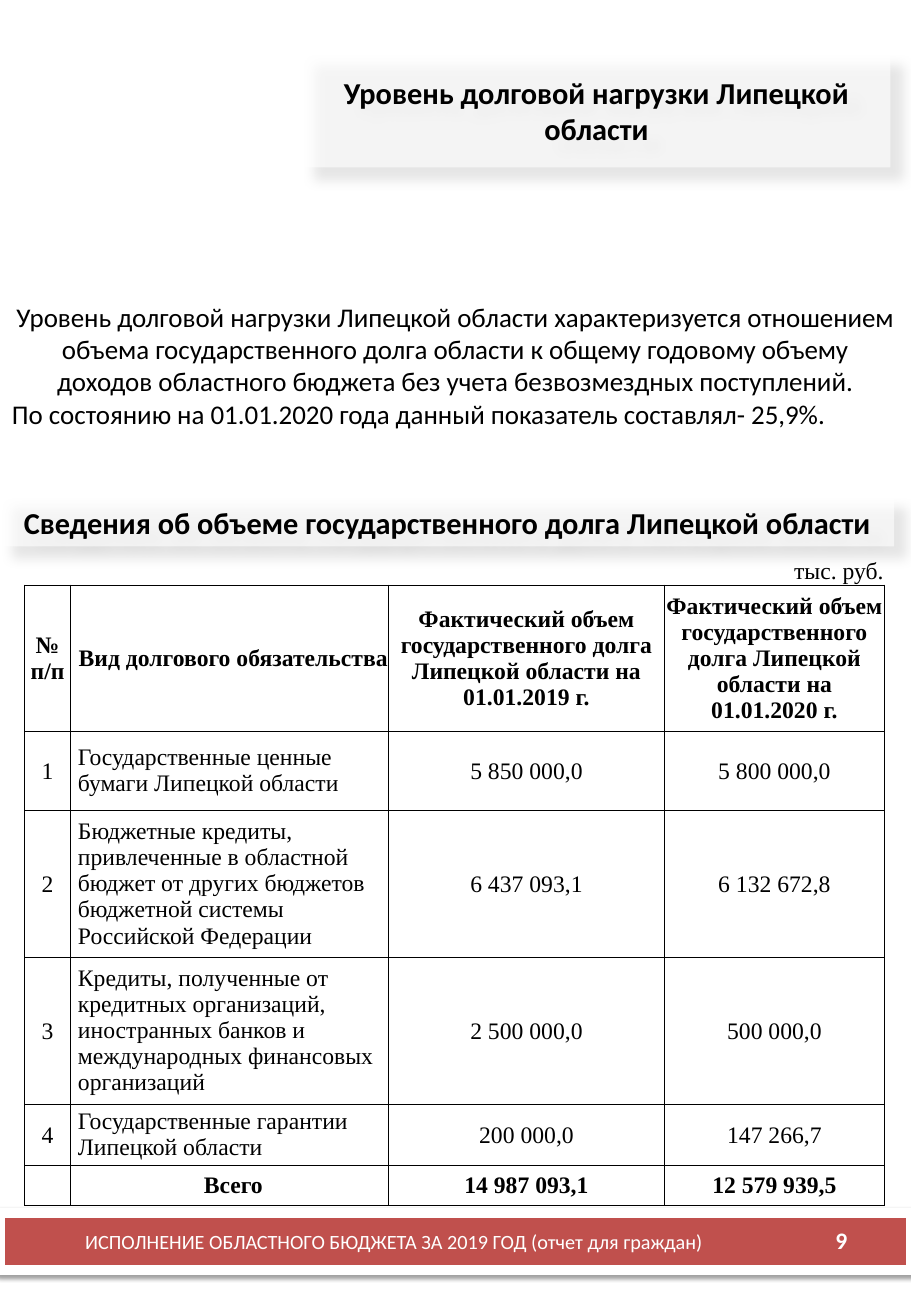
from dataclasses import dataclass

from lxml.etree import SubElement
from pptx import Presentation
from pptx.dml.color import RGBColor
from pptx.enum.shapes import MSO_SHAPE
from pptx.enum.text import MSO_ANCHOR, MSO_AUTO_SIZE, PP_ALIGN
from pptx.oxml import parse_xml
from pptx.oxml.ns import nsdecls, qn
from pptx.util import Cm, Pt


@dataclass(frozen=True)
class Theme:
    text_font: str = "Calibri"
    table_font: str = "Times New Roman"
    black: str = "000000"
    white: str = "FFFFFF"
    red: str = "C0504D"
    heading_size: int = 18
    body_size: int = 16
    table_size: int = 14
    number_size: int = 14
    footer_size: int = 12


class DebtSlide:
    def __init__(self, slide, theme):
        self.slide = slide
        self.theme = theme

    def add_run(self, paragraph, text, size, bold=False, font=None, color=None):
        run = paragraph.add_run()
        run.text = text
        run.font.name = font or self.theme.text_font
        run.font.size = Pt(size)
        run.font.bold = bold
        run.font.color.rgb = RGBColor.from_string(color or self.theme.black)

    def place(self, shape, left, top, width, height):
        shape.left, shape.top = Cm(left), Cm(top)
        shape.width, shape.height = Cm(width), Cm(height)

    def set_shadow(self, shape, opacity, blur, distance, angle):
        shape.shadow.inherit = False
        effects = shape._element.spPr.find(qn("a:effectLst"))
        effects.append(parse_xml(
            f'<a:outerShdw {nsdecls("a")} blurRad="{Pt(blur)}" dist="{Pt(distance)}" '
            f'dir="{angle * 60000}" algn="tl" rotWithShape="0">'
            f'<a:srgbClr val="{self.theme.black}"><a:alpha val="{opacity * 1000}"/>'
            f'</a:srgbClr></a:outerShdw>'))

    def heading(self, shape, box, text, anchor):
        self.place(shape, *box)
        shape.fill.solid()
        shape.fill.fore_color.rgb = RGBColor.from_string(self.theme.white)
        fill_color = shape._element.spPr.find(qn("a:solidFill"))[0]
        SubElement(fill_color, qn("a:alpha"), val="60000")
        self.set_shadow(shape, opacity=16, blur=7, distance=10, angle=45)
        frame = shape.text_frame
        frame.auto_size = MSO_AUTO_SIZE.NONE
        frame.word_wrap = True
        frame.vertical_anchor = anchor
        paragraph = frame.paragraphs[0]
        properties = paragraph._p.get_or_add_pPr()
        properties.set("marL", "0")
        properties.set("indent", "0")
        SubElement(properties, qn("a:buNone"))
        paragraph.alignment = PP_ALIGN.CENTER
        paragraph.space_before = Pt(0)
        self.add_run(paragraph, text, self.theme.heading_size, bold=True)

    def text(self, box, lines, size, anchor=MSO_ANCHOR.TOP, bold=False, color=None):
        shape = self.slide.shapes.add_textbox(*(Cm(length) for length in box))
        frame = shape.text_frame
        frame.word_wrap = True
        frame.vertical_anchor = anchor
        for index, (line, alignment) in enumerate(lines):
            paragraph = frame.add_paragraph() if index else frame.paragraphs[0]
            paragraph.alignment = alignment
            self.add_run(paragraph, line, size, bold, color=color)

    def band(self, box):
        shape = self.slide.shapes.add_shape(
            MSO_SHAPE.RECTANGLE, *(Cm(length) for length in box))
        shape.fill.solid()
        shape.fill.fore_color.rgb = RGBColor.from_string(self.theme.red)
        shape.line.color.rgb = RGBColor.from_string(self.theme.white)
        shape.line.width = Pt(6)
        self.set_shadow(shape, opacity=38, blur=3.1, distance=1.6, angle=90)

    def set_borders(self, cell, visible):
        properties = cell._tc.get_or_add_tcPr()
        for index, side in enumerate("LRTB"):
            paint = (f'<a:solidFill><a:srgbClr val="{self.theme.black}"/></a:solidFill>'
                     if side in visible else "<a:noFill/>")
            properties.insert(index, parse_xml(
                f'<a:ln{side} {nsdecls("a")} w="{Pt(0.5)}">{paint}</a:ln{side}>'))

    def table(self, left, top, widths, heights, rows, name_span):
        table = self.slide.shapes.add_table(
            len(rows), len(widths), Cm(left), Cm(top),
            Cm(sum(widths)), Cm(sum(heights))).table
        table.first_row = table.horz_banding = False
        for column, width in zip(table.columns, widths):
            column.width = Cm(width)
        for row, height in zip(table.rows, heights):
            row.height = Cm(height)
        unit_row, header_row, total_row = 0, 1, len(rows) - 1
        for row_index, (number, name, *amounts) in enumerate(rows):
            values = [number, name] + [""] * (name_span - 1) + amounts
            is_unit = row_index == unit_row
            is_bold = row_index in (header_row, total_row)
            # The name takes several grid columns below the unit row
            if not is_unit:
                table.cell(row_index, 1).merge(table.cell(row_index, name_span))
            for column_index, value in enumerate(values):
                cell = table.cell(row_index, column_index)
                is_name = column_index == 1
                cell.fill.background()
                self.set_borders(cell, "B" if is_unit else "LRTB")
                cell.margin_left = Cm(0.15 if is_name else 0.02)
                cell.margin_right = Cm(0 if is_name else 0.02)
                cell.margin_top = Cm(0 if is_name else 0.02)
                cell.margin_bottom = Cm(0)
                cell.vertical_anchor = MSO_ANCHOR.BOTTOM if is_unit else MSO_ANCHOR.MIDDLE
                if not value:
                    continue
                paragraph = cell.text_frame.paragraphs[0]
                if is_unit:
                    paragraph.alignment = PP_ALIGN.RIGHT
                elif is_name and not is_bold:
                    paragraph.alignment = PP_ALIGN.LEFT
                else:
                    paragraph.alignment = PP_ALIGN.CENTER
                self.add_run(paragraph, value, self.theme.table_size, is_bold,
                             self.theme.table_font)


DEBT_ROWS = [
    ("", "", "", "тыс. руб."),
    ("№ п/п", "Вид долгового обязательства",
     "Фактический объем государственного долга Липецкой области на 01.01.2019 г.",
     "Фактический объем государственного долга Липецкой области на 01.01.2020 г."),
    ("1", "Государственные ценные бумаги Липецкой области", "5 850 000,0", "5 800 000,0"),
    ("2", "Бюджетные кредиты, привлеченные в областной бюджет от других бюджетов "
     "бюджетной системы Российской Федерации", "6 437 093,1", "6 132 672,8"),
    ("3", "Кредиты, полученные от кредитных организаций, иностранных банков и "
     "международных финансовых организаций", "2 500 000,0", "500 000,0"),
    ("4", "Государственные гарантии Липецкой области", "200 000,0", "147 266,7"),
    ("", "Всего", "14 987 093,1", "12 579 939,5"),
]


def main():
    presentation = Presentation()
    presentation.slide_width, presentation.slide_height = Cm(19.05), Cm(27.51)
    slide = presentation.slides.add_slide(presentation.slide_layouts[1])
    theme = Theme()
    page = DebtSlide(slide, theme)

    # Headings
    page.heading(slide.shapes.title, (6.33, 1.11, 12.29, 2.39),
                 "Уровень долговой нагрузки Липецкой области", MSO_ANCHOR.MIDDLE)
    page.heading(slide.placeholders[1], (0.01, 10.35, 18.69, 1.07),
                 "Сведения об объеме государственного долга Липецкой области",
                 MSO_ANCHOR.BOTTOM)

    # Explanation
    page.text((0, 6.15, 19.05, 3), [
        ("Уровень долговой нагрузки Липецкой области характеризуется отношением объема "
         "государственного долга области к общему годовому объему доходов областного "
         "бюджета без учета безвозмездных поступлений.", PP_ALIGN.CENTER),
        ("По состоянию на 01.01.2020 года данный показатель составлял- 25,9%.",
         PP_ALIGN.LEFT),
    ], theme.body_size)

    # Debt table
    name_span = 5
    page.table(0.51, 11.35, widths=[0.97] + [1.33] * name_span + [5.76, 4.61],
               heights=(0.88, 3.06, 1.65, 3.07, 3.07, 1.28, 0.84),
               rows=DEBT_ROWS, name_span=name_span)

    # Footer
    page.band((0, 25.35, 19.05, 1.2))
    page.text((0.74, 25.55, 15.01, 0.79),
              [("ИСПОЛНЕНИЕ ОБЛАСТНОГО БЮДЖЕТА ЗА 2019 ГОД (отчет для граждан)",
                PP_ALIGN.CENTER)],
              theme.footer_size, MSO_ANCHOR.MIDDLE, color=theme.white)
    page.text((16.32, 25.55, 1.65, 0.74), [("9", PP_ALIGN.RIGHT)],
              theme.number_size, MSO_ANCHOR.MIDDLE, bold=True, color=theme.white)

    presentation.save("out.pptx")


if __name__ == "__main__":
    main()
